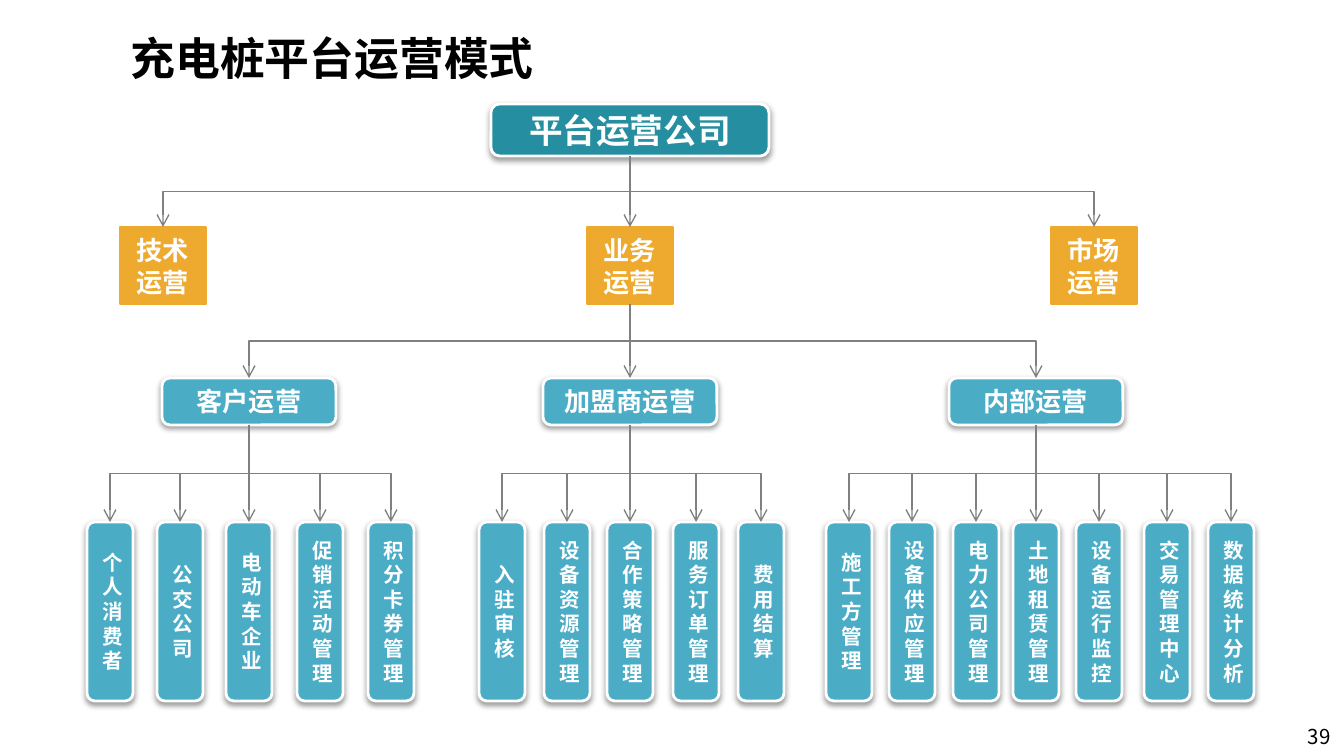
from lxml import etree
from pptx import Presentation
from pptx import util as u
from pptx.dml.color import RGBColor
from pptx.enum import shapes, text
from pptx.oxml.ns import qn

TITLE = "充电桩平台运营模式"
PAGE_NUMBER = "39"

# Each node: text, centre x in px, children
CUSTOMER = [
    ("个人消费者", 110), ("公交公司", 180), ("电动车企业", 249),
    ("促销活动管理", 320), ("积分\n卡券管理", 391),
]
FRANCHISE = [
    ("入驻审核", 502), ("设备资源管理", 567), ("合作策略管理", 630),
    ("服务订单管理", 696), ("费用结算", 761),
]
INTERNAL = [
    ("施工方管理", 849), ("设备供应管理", 912), ("电力公司管理", 976),
    ("土地租赁管理", 1036), ("设备运行监控", 1099), ("交易\n管理中心", 1167),
    ("数据统计分析", 1231),
]
BUSINESS = [
    ("客户运营", 249, CUSTOMER),
    ("加盟商运营", 630, FRANCHISE),
    ("内部运营", 1036, INTERNAL),
]
COMPANY = ("平台运营公司", 630, [
    ("技术\n运营", 163), ("业务\n运营", 630, BUSINESS), ("市场\n运营", 1094),
])

THEME = {
    "font": "Noto Sans CJK SC",
    "black": "000000", "white": "FFFFFF", "line": "808080",
    "teal": "258EA1", "orange": "EEAA2E", "blue": "4BACC6",
    "title": 24, "company": 18, "unit": 14, "leaf": 11, "page": 11,
    "thin": 0.75, "border": 1.5,
}

# One style per level of the tree, in px
LEVELS = [
    dict(top=104, width=278, height=52, fill="teal", size="company", rounded=True, inset=0),
    dict(top=227, width=86, height=77, fill="orange", size="unit", rounded=False, spacing=17,
         wrap=False),
    dict(top=378, width=174, height=47, fill="blue", size="unit", rounded=True, inset=0),
    dict(top=522, width=46, height=179, fill="blue", size="leaf", rounded=True, spacing=13.2),
]

SCALE = 914400 / 134.4


def px(value):
    return u.Emu(round(value * SCALE))


def color(name):
    return RGBColor.from_string(THEME[name])


def write(shape, content, size, fill="white", bold=True, align=text.PP_ALIGN.CENTER,
          spacing=None, inset=None, wrap=True):
    """Fill a shape with one paragraph per line of content."""
    frame = shape.text_frame
    frame.text = content
    frame.word_wrap = wrap
    frame.auto_size = text.MSO_AUTO_SIZE.NONE
    frame.vertical_anchor = text.MSO_ANCHOR.MIDDLE
    if inset is not None:
        frame.margin_left = frame.margin_right = px(inset)
    for paragraph in frame.paragraphs:
        paragraph.alignment = align
        if spacing:
            paragraph.line_spacing = u.Pt(spacing)
        for run in paragraph.runs:
            run.font.size = u.Pt(THEME[size])
            run.font.bold = bold
            run.font.name = THEME["font"]
            run.font.color.rgb = color(fill)
            east_asian = etree.SubElement(run.font._element, qn("a:ea"))
            east_asian.set("typeface", THEME["font"])


def add_soft_shadow(shape):
    effects = shape._element.spPr.find(qn("a:effectLst"))
    shadow = etree.SubElement(effects, qn("a:outerShdw"), blurRad=str(u.Pt(3.1)),
                              dist=str(u.Pt(1.6)), dir="5400000", rotWithShape="0")
    shade = etree.SubElement(shadow, qn("a:srgbClr"), val=THEME["black"])
    etree.SubElement(shade, qn("a:alpha"), val="38000")


def add_box(slide, content, center, top, width, height, fill, size, rounded, **format):
    kind = shapes.MSO_SHAPE.ROUNDED_RECTANGLE if rounded else shapes.MSO_SHAPE.RECTANGLE
    box = slide.shapes.add_shape(kind, px(center - width / 2), px(top), px(width), px(height))
    box.fill.solid()
    box.fill.fore_color.rgb = color(fill)
    box.line.color.rgb = color("white" if rounded else fill)
    box.line.width = u.Pt(THEME["border" if rounded else "thin"])
    box.shadow.inherit = False
    if rounded:
        add_soft_shadow(box)
    write(box, content, size, **format)
    return box


def add_branch(slide, parent, child):
    """Join the parent's bottom to the child's top, with an elbow halfway down."""
    start_x = parent.left + parent.width // 2
    start_y = parent.top + parent.height
    end_x = child.left + child.width // 2
    across, down = end_x - start_x, child.top - start_y
    straight = abs(across) < px(1)
    kind = shapes.MSO_CONNECTOR.STRAIGHT if straight else shapes.MSO_CONNECTOR.ELBOW
    branch = slide.shapes.add_connector(kind, start_x, start_y, end_x, child.top)
    branch.begin_connect(parent, 2)
    branch.end_connect(child, 0)
    if not straight:
        # An elbow runs sideways first, so it is turned to run downwards first
        branch.width, branch.height = down, abs(across)
        branch.left = (start_x + end_x - down) // 2
        branch.top = (start_y + child.top - abs(across)) // 2
        frame = branch._element.spPr.find(qn("a:xfrm"))
        frame.set("rot", "16200000" if across > 0 else "5400000")
        frame.set("flipH", "1" if across > 0 else "0")
        frame.set("flipV", "0")
    branch.line.color.rgb = color("line")
    branch.line.width = u.Pt(THEME["thin"])
    etree.SubElement(branch.line._get_or_add_ln(), qn("a:tailEnd"), type="arrow")
    etree.SubElement(branch._element.spPr, qn("a:effectLst"))


def add_tree(slide, node, level=0):
    content, center, *children = node
    box = add_box(slide, content, center, **LEVELS[level])
    for child in children[0] if children else []:
        add_branch(slide, box, add_tree(slide, child, level + 1))
    return box


def main():
    presentation = Presentation()
    presentation.slide_width, presentation.slide_height = px(1344), px(756)
    slide = presentation.slides.add_slide(presentation.slide_layouts[5])

    title = slide.shapes.title
    title.left, title.top, title.width, title.height = map(px, (117, 23, 1058, 70))
    write(title, TITLE, "title", fill="black", align=text.PP_ALIGN.LEFT)

    page = slide.shapes.add_textbox(*map(px, (978, 716, 366, 40)))
    write(page, PAGE_NUMBER, "page", fill="black", bold=False, align=text.PP_ALIGN.RIGHT)

    add_tree(slide, COMPANY)
    presentation.save("out.pptx")


if __name__ == "__main__":
    main()
